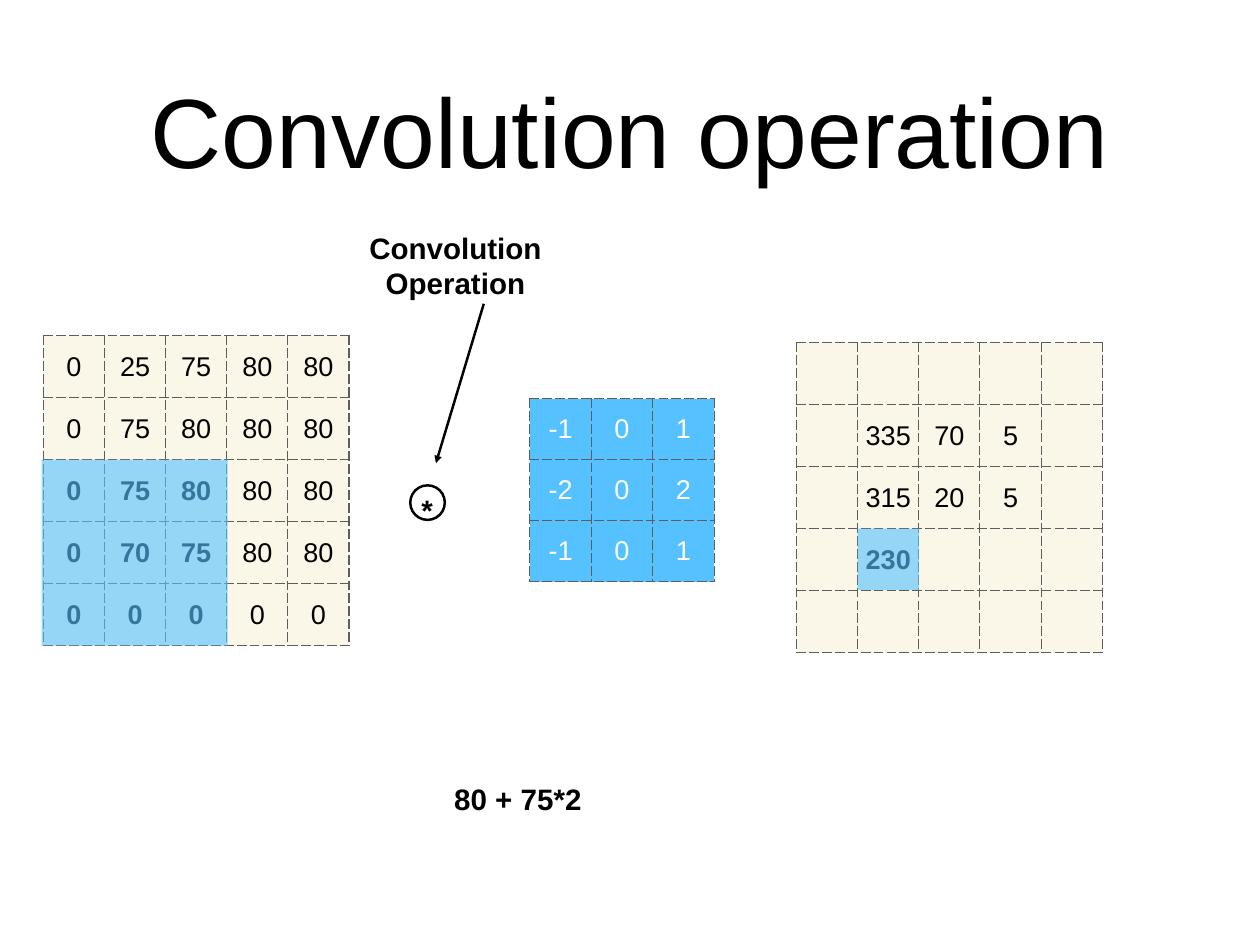
from lxml.etree import SubElement
from pptx import Presentation
from pptx.dml.color import RGBColor
from pptx.enum.shapes import MSO_CONNECTOR as CONNECTOR, MSO_SHAPE as SHAPE
from pptx.enum.text import MSO_ANCHOR as ANCHOR, PP_ALIGN as ALIGN
from pptx.oxml.ns import qn
from pptx.util import Pt

PX = 9144  # EMU per px, 100 px to the inch
INSET = 6
FONT = "Arial"
BLACK, WHITE = "000000", "FFFFFF"
CREAM, BLUE, GRID_LINE = "FAF7E9", "56C1FF", "5D5D5D"

INPUT_VALUES = [
    ["0", "25", "75", "80", "80"],
    ["0", "75", "80", "80", "80"],
    ["0", "75", "80", "80", "80"],
    ["0", "70", "75", "80", "80"],
    ["0", "0", "0", "0", "0"],
]
KERNEL_VALUES = [["-1", "0", "1"], ["-2", "0", "2"], ["-1", "0", "1"]]
OUTPUT_VALUES = [
    ["", "", "", "", ""],
    ["", "335", "70", "5", ""],
    ["", "315", "20", "5", ""],
    ["", "230", "", "", ""],
    ["", "", "", "", ""],
]


def px(*lengths):
    return [length * PX for length in lengths]


def color(hex_string):
    return RGBColor.from_string(hex_string)


def write(frame, text, size, hex_string, bold=False):
    paragraph = frame.paragraphs[0]
    paragraph.alignment = ALIGN.CENTER
    run = paragraph.add_run()
    run.text = text
    run.font.name = FONT
    run.font.size = Pt(size)
    run.font.bold = bold
    run.font.color.rgb = color(hex_string)


def set_insets(target):
    target.margin_left = target.margin_right = INSET * PX
    target.margin_top = target.margin_bottom = INSET * PX
    target.vertical_anchor = ANCHOR.MIDDLE


def add_label(slide, box, text, size=24, bold=True, wrap=False):
    frame = slide.shapes.add_textbox(*px(*box)).text_frame
    frame.word_wrap = wrap
    set_insets(frame)
    write(frame, text, size, BLACK, bold)


def add_dashed_borders(cell):
    properties = cell._tc.get_or_add_tcPr()
    for side in ("lnL", "lnR", "lnT", "lnB"):
        line = SubElement(properties, qn(f"a:{side}"), w=str(Pt(1)))
        fill = SubElement(line, qn("a:solidFill"))
        SubElement(fill, qn("a:srgbClr"), val=GRID_LINE)
        SubElement(line, qn("a:prstDash"), val="dash")


def add_matrix(slide, box, values, fill, text_color, bold_cells=()):
    left, top, width, height = box
    rows, columns = len(values), len(values[0])
    table = slide.shapes.add_table(rows, columns, *px(left, top, width, height)).table
    table.first_row = table.horz_banding = False
    for column in table.columns:
        column.width = width * PX // columns
    for row in table.rows:
        row.height = height * PX // rows
    for r, row_values in enumerate(values):
        for c, value in enumerate(row_values):
            cell = table.cell(r, c)
            set_insets(cell)
            add_dashed_borders(cell)
            cell.fill.solid()
            cell.fill.fore_color.rgb = color(fill)
            if value:
                write(cell.text_frame, value, 22, text_color, (r, c) in bold_cells)


def add_highlight(slide, box):
    shape = slide.shapes.add_shape(SHAPE.RECTANGLE, *px(*box))
    shape.shadow.inherit = False
    shape.line.fill.background()
    shape.fill.solid()
    shape.fill.fore_color.rgb = color(BLUE)
    tint = shape._element.spPr.find(f".//{qn('a:srgbClr')}")
    SubElement(tint, qn("a:alpha"), val="61000")


def add_input(slide, box):
    left, top, width, height = box
    window = [(r, c) for r in (2, 3, 4) for c in (0, 1, 2)]
    add_matrix(slide, box, INPUT_VALUES, CREAM, BLACK, window)
    # Window under the kernel: three cells each way
    add_highlight(slide, (left - 2, top + height * 2 // 5, 210, 210))


def add_output(slide, box):
    left, top, width, height = box
    add_matrix(slide, box, OUTPUT_VALUES, CREAM, BLACK, [(3, 1)])
    # Cell being computed
    add_highlight(slide, (left + width // 5, top + height * 3 // 5, 69, 69))


def add_operator(slide, box):
    left, top, width, height = box
    # Caption
    add_label(slide, (left, top, width, 87), "Convolution Operation", wrap=True)

    # Arrow from the caption to the operator
    arrow = slide.shapes.add_connector(
        CONNECTOR.STRAIGHT, *px(left + 147, top + 87, left + 93, top + 267))
    arrow.line.color.rgb = color(BLACK)
    arrow.line.width = Pt(2)
    SubElement(arrow.line._get_or_add_ln(), qn("a:tailEnd"), type="triangle")
    SubElement(arrow._element.spPr, qn("a:effectLst"))

    # Circled asterisk
    circle_top = top + height - 39
    add_label(slide, (left + 70, circle_top + 2, 26, 50), "*")
    circle = slide.shapes.add_shape(
        SHAPE.OVAL, *px(left + 64, circle_top, 39, 39))
    circle.shadow.inherit = False
    circle.fill.background()
    circle.line.color.rgb = color(BLACK)
    circle.line.width = Pt(2)


def main():
    presentation = Presentation()
    presentation.slide_width, presentation.slide_height = px(1422, 1067)
    slide = presentation.slides.add_slide(presentation.slide_layouts[6])

    add_label(slide, (104, 28, 1214, 236), "Convolution operation",
              size=80, bold=False, wrap=True)
    add_input(slide, (49, 379, 345, 350))
    add_operator(slide, (399, 256, 230, 331))
    add_matrix(slide, (598, 450, 208, 207), KERNEL_VALUES, BLUE, WHITE)
    add_output(slide, (899, 387, 345, 350))
    add_label(slide, (506, 877, 157, 50), "80 + 75*2")

    presentation.save("out.pptx")


if __name__ == "__main__":
    main()
